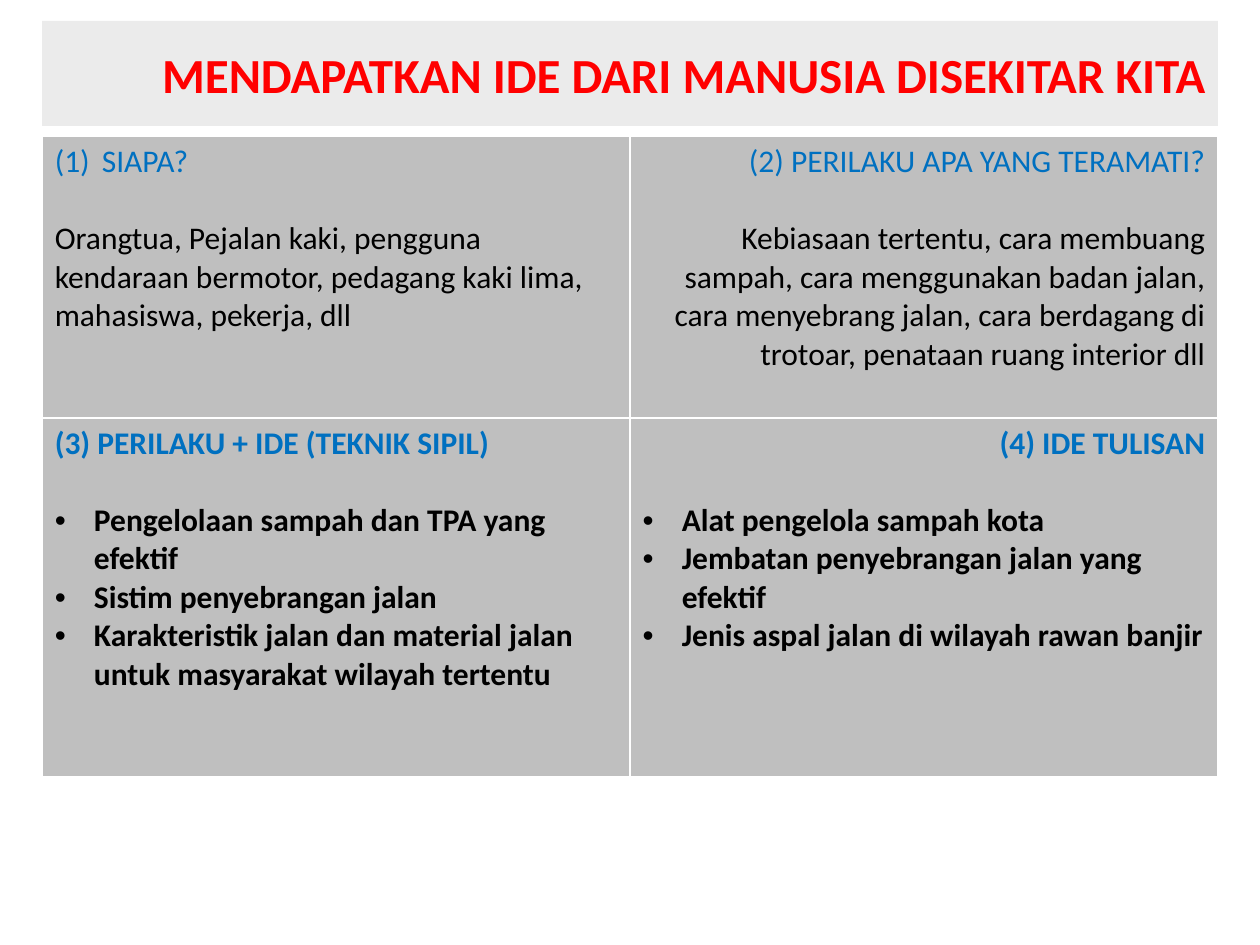
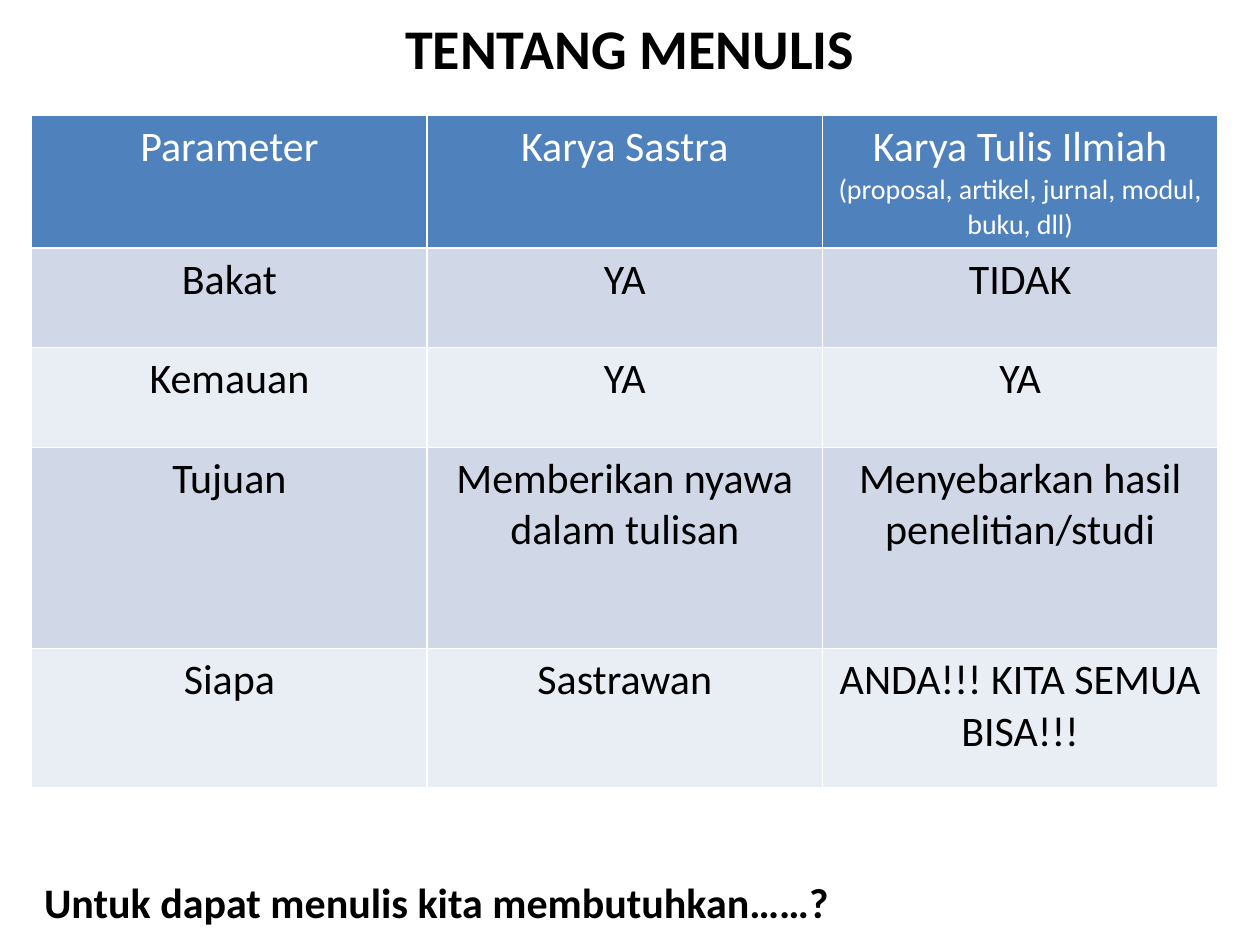
from lxml import etree
from pptx import Presentation
from pptx.dml.color import RGBColor
from pptx.enum import text as t
from pptx.oxml import ns
from pptx.util import Cm, Pt

FONT = "Calibri"
BLACK, WHITE, RED, BLUE = "000000", "FFFFFF", "FF0000", "0070C0"
GREY, PANEL = "BFBFBF", "D9D9D9"
HEADER, BANDS = "4F81BD", ("D0D8E8", "E9EDF4")
LEFT, CENTER, RIGHT = t.PP_ALIGN.LEFT, t.PP_ALIGN.CENTER, t.PP_ALIGN.RIGHT
BLANK_LINE = 22  # points left between a heading and its text


def color(hex_string):
    return RGBColor.from_string(hex_string)


def add_child(parent, tag, **attributes):
    return etree.SubElement(parent, ns.qn(tag), attributes)


def add_text(frame, content, size=18, ink=BLACK, bold=False, align=LEFT,
             before=0, bullet=None, indent=0):
    """Write one paragraph, using the frame's empty first one if it is free."""
    paragraph = frame.paragraphs[0]
    if paragraph.runs:
        paragraph = frame.add_paragraph()
    if bullet:
        properties = paragraph._p.get_or_add_pPr()
        properties.set("marL", str(Cm(indent)))
        properties.set("indent", str(-Cm(indent)))
        if bullet == "(1)":
            add_child(properties, "a:buFont", typeface="+mj-lt")
            add_child(properties, "a:buAutoNum", type="arabicParenBoth")
        else:
            add_child(properties, "a:buFont", typeface="Arial")
            add_child(properties, "a:buChar", char=bullet)
    paragraph.alignment = align
    if before:
        paragraph.space_before = Pt(before)
    run = paragraph.add_run()
    run.text = content
    run.font.name, run.font.size, run.font.bold = FONT, Pt(size), bold
    run.font.color.rgb = color(ink)


class Deck:
    def __init__(self):
        self.presentation = Presentation()
        self.presentation.slide_width = Cm(25.4)
        self.presentation.slide_height = Cm(19.05)
        self.slide = None

    def new_slide(self):
        layout = self.presentation.slide_layouts.get_by_name("Title Only")
        self.slide = self.presentation.slides.add_slide(layout)

    def title(self, content, left, top, width, height, panel=None, **style):
        shape = self.slide.shapes.title
        shape.left, shape.top = Cm(left), Cm(top)
        shape.width, shape.height = Cm(width), Cm(height)
        shape.text_frame.vertical_anchor = t.MSO_ANCHOR.MIDDLE
        if panel:
            shape.fill.solid()
            shape.fill.fore_color.rgb = color(panel)
            fill = shape._element.spPr.find(ns.qn("a:solidFill"))
            add_child(fill[0], "a:alpha", val="50000")
        add_text(shape.text_frame, content, bold=True, **style)

    def table(self, left, top, width, row_heights, columns):
        frame = self.slide.shapes.add_table(
            len(row_heights), columns, Cm(left), Cm(top), Cm(width),
            Cm(sum(row_heights)))
        table = frame.table
        table.first_row = table.horz_banding = False
        for row, height in zip(table.rows, row_heights):
            row.height = Cm(height)
        return table

    def cell(self, cell, fill, paragraphs, **shared):
        properties = cell._tc.get_or_add_tcPr()
        for side in ("a:lnL", "a:lnR", "a:lnT", "a:lnB"):
            line = add_child(properties, side, w=str(Pt(1)))
            add_child(add_child(line, "a:solidFill"), "a:srgbClr", val=WHITE)
        cell.fill.solid()
        cell.fill.fore_color.rgb = color(fill)
        for content, style in paragraphs:
            add_text(cell.text_frame, content, **{**shared, **style})

    def text_box(self, content, left, top, width, height, **style):
        box = self.slide.shapes.add_textbox(
            Cm(left), Cm(top), Cm(width), Cm(height))
        box.text_frame.word_wrap = True
        box.text_frame.auto_size = t.MSO_AUTO_SIZE.SHAPE_TO_FIT_TEXT
        add_text(box.text_frame, content, **style)


def bullets(*items):
    return [(item, dict(bullet="•", indent=0.79, before=0 if i else BLANK_LINE))
            for i, item in enumerate(items)]


def build_ideas_slide(deck):
    deck.new_slide()
    deck.title("MENDAPATKAN IDE DARI MANUSIA DISEKITAR KITA",
               0.85, 0.42, 23.7, 2.12, panel=PANEL, size=28, ink=RED, align=RIGHT)

    # Four quadrants: a blue heading, then prose or a list
    table = deck.table(0.85, 2.75, 23.7, (5.68, 7.22), 2)
    heading, right = dict(ink=BLUE), dict(ink=BLUE, align=RIGHT)
    quadrants = [
        [[("SIAPA?", dict(heading, bullet="(1)", indent=0.95)),
          ("Orangtua, Pejalan kaki, pengguna kendaraan bermotor, pedagang kaki "
           "lima, mahasiswa, pekerja, dll", dict(before=BLANK_LINE))],
         [("(2) PERILAKU APA YANG TERAMATI?", right),
          ("Kebiasaan tertentu, cara membuang sampah, cara menggunakan badan "
           "jalan, cara menyebrang jalan, cara berdagang di trotoar, penataan "
           "ruang interior dll", dict(align=RIGHT, before=BLANK_LINE))]],
        [[("(3) PERILAKU + IDE (TEKNIK SIPIL)", heading),
          *bullets("Pengelolaan sampah dan TPA yang efektif",
                   "Sistim penyebrangan jalan",
                   "Karakteristik jalan dan material jalan untuk masyarakat "
                   "wilayah tertentu")],
         [("(4) IDE TULISAN", right),
          *bullets("Alat pengelola sampah kota",
                   "Jembatan penyebrangan jalan yang efektif",
                   "Jenis aspal jalan di wilayah rawan banjir")]],
    ]
    for r, row in enumerate(quadrants):
        for c, paragraphs in enumerate(row):
            deck.cell(table.cell(r, c), GREY, paragraphs, bold=r == 1)


def build_writing_slide(deck):
    deck.new_slide()
    deck.title("TENTANG MENULIS", 1.27, -0.64, 22.86, 3.18, size=32, align=CENTER)

    # Comparison table with a header row and alternating bands
    rows = [
        ("Parameter", "Karya Sastra", "Karya Tulis Ilmiah"),
        ("Bakat", "YA", "TIDAK"),
        ("Kemauan", "YA", "YA"),
        ("Tujuan", "Memberikan nyawa dalam tulisan",
         "Menyebarkan hasil penelitian/studi"),
        ("Siapa", "Sastrawan", "ANDA!!! KITA SEMUA BISA!!!"),
    ]
    table = deck.table(0.64, 2.33, 23.91, (2.67, 2.01, 2.01, 4.06, 2.8), 3)
    for r, row in enumerate(rows):
        fill = BANDS[(r - 1) % 2] if r else HEADER
        for c, content in enumerate(row):
            deck.cell(table.cell(r, c), fill, [(content, {})], size=24,
                      ink=BLACK if r else WHITE, align=CENTER)
    add_text(table.cell(0, 2).text_frame,
             "(proposal, artikel, jurnal, modul, buku, dll)",
             size=16, ink=WHITE, align=CENTER)

    # Closing question
    deck.text_box("Untuk dapat menulis kita membutuhkan……?",
                  0.64, 17.55, 23.5, 1.28, size=24, bold=True)


def main():
    deck = Deck()
    build_ideas_slide(deck)
    build_writing_slide(deck)
    deck.presentation.save("out.pptx")


if __name__ == "__main__":
    main()
